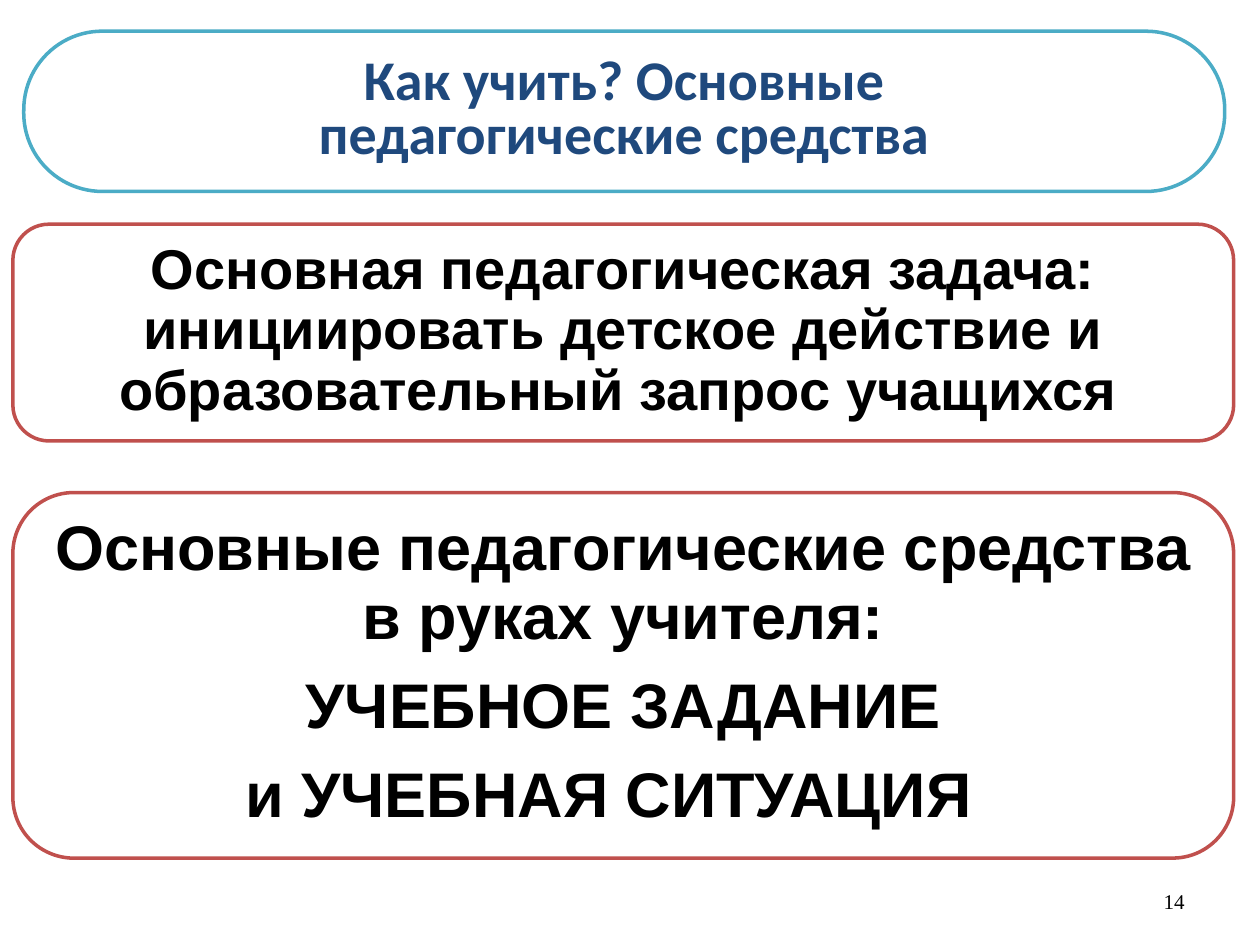
from pptx import Presentation
from pptx.dml.color import RGBColor
from pptx.enum.shapes import MSO_SHAPE
from pptx.enum.text import MSO_ANCHOR, PP_ALIGN
from pptx.util import Cm, Pt

WHITE = RGBColor(0xFF, 0xFF, 0xFF)
BLACK = RGBColor(0, 0, 0)
NAVY = RGBColor(0x1F, 0x49, 0x7D)
TEAL = RGBColor(0x4B, 0xAC, 0xC6)
RED = RGBColor(0xC0, 0x50, 0x4D)


def write(frame, lines, size, font, color, bold=True,
          align=PP_ALIGN.CENTER, pitch=None, gap=0):
    """Fill a text frame with one paragraph per line."""
    frame.text = "\n".join(lines)
    for i, para in enumerate(frame.paragraphs):
        para.alignment = align
        para.line_spacing = pitch
        para.space_before = Pt(gap if i else 0)
        para.font.size = Pt(size)
        para.font.name = font
        para.font.bold = bold
        para.font.color.rgb = color


def panel(slide, box, line):
    """Draw a white rounded panel and return it."""
    shape = slide.shapes.add_shape(
        MSO_SHAPE.ROUNDED_RECTANGLE, *map(Cm, box))
    shape.shadow.inherit = False
    shape.fill.solid()
    shape.fill.fore_color.rgb = WHITE
    shape.line.color.rgb = line
    shape.line.width = Pt(2)
    return shape


def title(slide, box, lines):
    shape = panel(slide, box, TEAL)
    shape.adjustments[0] = 0.49
    frame = shape.text_frame
    frame.word_wrap = False
    frame.vertical_anchor = MSO_ANCHOR.MIDDLE
    write(frame, lines, 32, "Calibri", NAVY, pitch=0.8)


def thesis(slide, box, lines, size):
    frame = panel(slide, box, RED).text_frame
    frame.word_wrap = True
    frame.vertical_anchor = MSO_ANCHOR.TOP
    write(frame, lines, size, "Arial", BLACK, pitch=0.9, gap=12)


def number(slide, box, text):
    frame = slide.shapes.add_textbox(*map(Cm, box)).text_frame
    frame.word_wrap = True
    frame.vertical_anchor = MSO_ANCHOR.MIDDLE
    write(frame, [text], 12, "Times New Roman", BLACK,
          bold=False, align=PP_ALIGN.RIGHT)


def main():
    deck = Presentation()
    deck.slide_width, deck.slide_height = Cm(25.4), Cm(19.05)
    slide = deck.slides.add_slide(deck.slide_layouts[6])

    # Page number
    number(slide, (18.21, 17.65, 5.92, 1.02), "14")

    # Teaching tools
    thesis(slide, (0.26, 9.93, 24.61, 7.37), [
        "Основные педагогические средства в руках учителя:",
        "УЧЕБНОЕ ЗАДАНИЕ",
        "и УЧЕБНАЯ СИТУАЦИЯ\t",
    ], 36)

    # Teaching task
    thesis(slide, (0.26, 4.52, 24.61, 4.37), [
        "Основная педагогическая задача: инициировать детское действие "
        "и образовательный запрос учащихся\t",
    ], 32)

    # Heading
    title(slide, (0.48, 0.63, 24.21, 3.23),
          ["Как учить? Основные", "педагогические средства"])

    deck.save("out.pptx")


if __name__ == "__main__":
    main()
